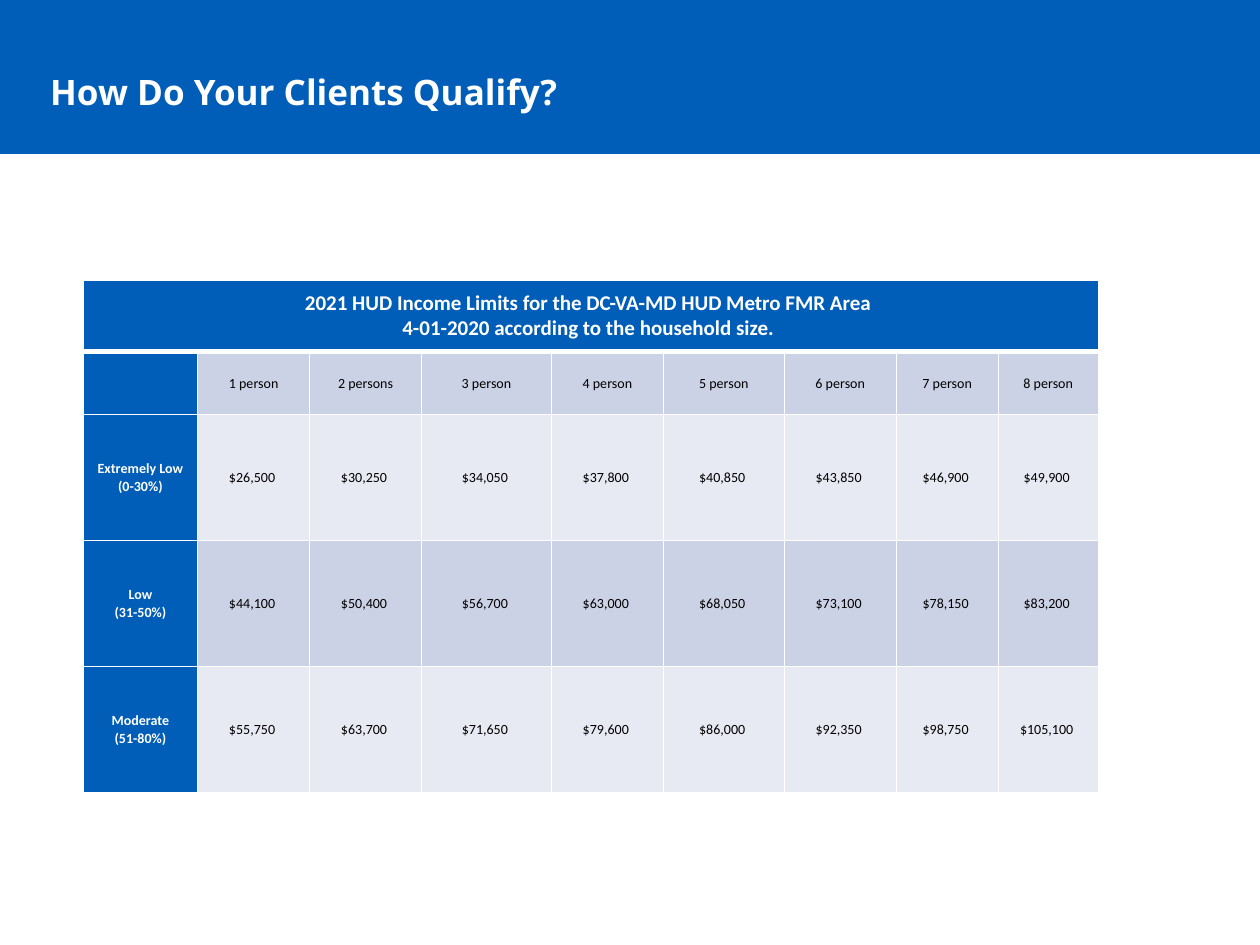
from lxml import etree
from pptx import Presentation
from pptx.dml.color import RGBColor
from pptx.enum.shapes import MSO_SHAPE
from pptx.enum.text import MSO_ANCHOR, PP_ALIGN
from pptx.oxml.ns import qn
from pptx.util import Pt

RECT = MSO_SHAPE.RECTANGLE
MIDDLE = MSO_ANCHOR.MIDDLE
CENTER = PP_ALIGN.CENTER

BLUE = RGBColor(0x00, 0x5E, 0xB8)
WHITE = RGBColor(0xFF, 0xFF, 0xFF)
BLACK = RGBColor(0x00, 0x00, 0x00)
DARK = RGBColor(0xCC, 0xD2, 0xE6)
LIGHT = RGBColor(0xE7, 0xEA, 0xF3)

TITLE = "How Do Your Clients Qualify?"
HEAD = [
    "2021 HUD Income Limits for the DC-VA-MD HUD Metro FMR Area ",
    "4-01-2020 according to the household size. ",
]
SIZES = ["1 person", "2 persons", "3 person", "4 person",
         "5 person", "6 person", "7 person", "8 person"]
LIMITS = [
    ("Extremely Low\n(0-30%)",
     [26500, 30250, 34050, 37800, 40850, 43850, 46900, 49900]),
    ("Low\n(31-50%)",
     [44100, 50400, 56700, 63000, 68050, 73100, 78150, 83200]),
    ("Moderate\n(51-80%)",
     [55750, 63700, 71650, 79600, 86000, 92350, 98750, 105100]),
]
WIDTHS = [65.5, 64, 64, 74.2, 64, 69.1, 64, 58.3, 57.2]
HEIGHTS = [41, 36, 72, 72, 72]


def add_run(para, text, font, size, color, bold):
    """Add one run of styled text to a paragraph."""
    run = para.add_run()
    run.text = text
    run.font.name = font
    run.font.size = Pt(size)
    run.font.bold = bold
    run.font.color.rgb = color


def add_title(slide, left, top, width, height):
    """Place the blue band and the slide title in it."""
    band = slide.shapes.add_shape(RECT, Pt(left), Pt(top), Pt(width), Pt(height))
    band.shadow.inherit = False
    band.fill.solid()
    band.fill.fore_color.rgb = BLUE
    band.line.fill.background()
    box = slide.shapes.add_textbox(
        Pt(left + 21.6), Pt(top + 22.3), Pt(width - 73.4), Pt(60.5))
    frame = box.text_frame
    frame.word_wrap = True
    frame.vertical_anchor = MIDDLE
    add_run(frame.paragraphs[0], TITLE, "Open Sans", 20, WHITE, True)


def add_edge(cell, side, weight):
    """Draw one white border of a cell."""
    props = cell._tc.get_or_add_tcPr()
    line = etree.SubElement(props, qn(f"a:ln{side}"), w=str(Pt(weight)))
    fill = etree.SubElement(line, qn("a:solidFill"))
    etree.SubElement(fill, qn("a:srgbClr"), val=str(WHITE))


def style_cell(cell, fill, top, base):
    """Set the borders, fill, margins and anchor of a cell."""
    for side, weight in (("L", 1), ("R", 1), ("T", top), ("B", base)):
        add_edge(cell, side, weight)
    cell.fill.solid()
    cell.fill.fore_color.rgb = fill
    cell.margin_left = cell.margin_right = Pt(5)
    cell.margin_top = cell.margin_bottom = Pt(0)
    cell.vertical_anchor = MIDDLE


def write_cell(cell, paras, size, color, bold):
    """Write centred paragraphs, with line breaks where they are marked."""
    frame = cell.text_frame
    for num, text in enumerate(paras):
        para = frame.add_paragraph() if num else frame.paragraphs[0]
        para.alignment = CENTER
        for pos, part in enumerate(text.split("\n")):
            if pos:
                para.add_line_break()
            add_run(para, part, "Calibri", size, color, bold)


def add_limits(slide, left, top):
    """Place the table of income limits."""
    frame = slide.shapes.add_table(
        len(HEIGHTS), len(WIDTHS), Pt(left), Pt(top),
        Pt(sum(WIDTHS)), Pt(sum(HEIGHTS)))
    table = frame.table
    for col, width in zip(table.columns, WIDTHS):
        col.width = Pt(width)
    for row, height in zip(table.rows, HEIGHTS):
        row.height = Pt(height)

    for row in range(len(HEIGHTS)):
        for col in range(len(WIDTHS)):
            band = DARK if row % 2 else LIGHT
            fill = BLUE if row == 0 or col == 0 else band
            style_cell(table.cell(row, col), fill,
                       3 if row == 1 else 1, 3 if row == 0 else 1)

    table.cell(0, 0).merge(table.cell(0, len(WIDTHS) - 1))
    write_cell(table.cell(0, 0), HEAD, 12, WHITE, True)
    for col, text in enumerate(SIZES, 1):
        write_cell(table.cell(1, col), [text], 8, BLACK, False)
    for row, (label, values) in enumerate(LIMITS, 2):
        write_cell(table.cell(row, 0), [label], 8, WHITE, True)
        for col, value in enumerate(values, 1):
            write_cell(table.cell(row, col), [f"${value:,} "], 8, BLACK, False)


def main():
    """Build the slide and save it."""
    deck = Presentation()
    deck.slide_width = Pt(720)
    deck.slide_height = Pt(540)
    slide = deck.slides.add_slide(deck.slide_layouts[6])
    add_title(slide, 0, 0, 720, 88)
    add_limits(slide, 47.5, 160)
    deck.save("out.pptx")


if __name__ == "__main__":
    main()
